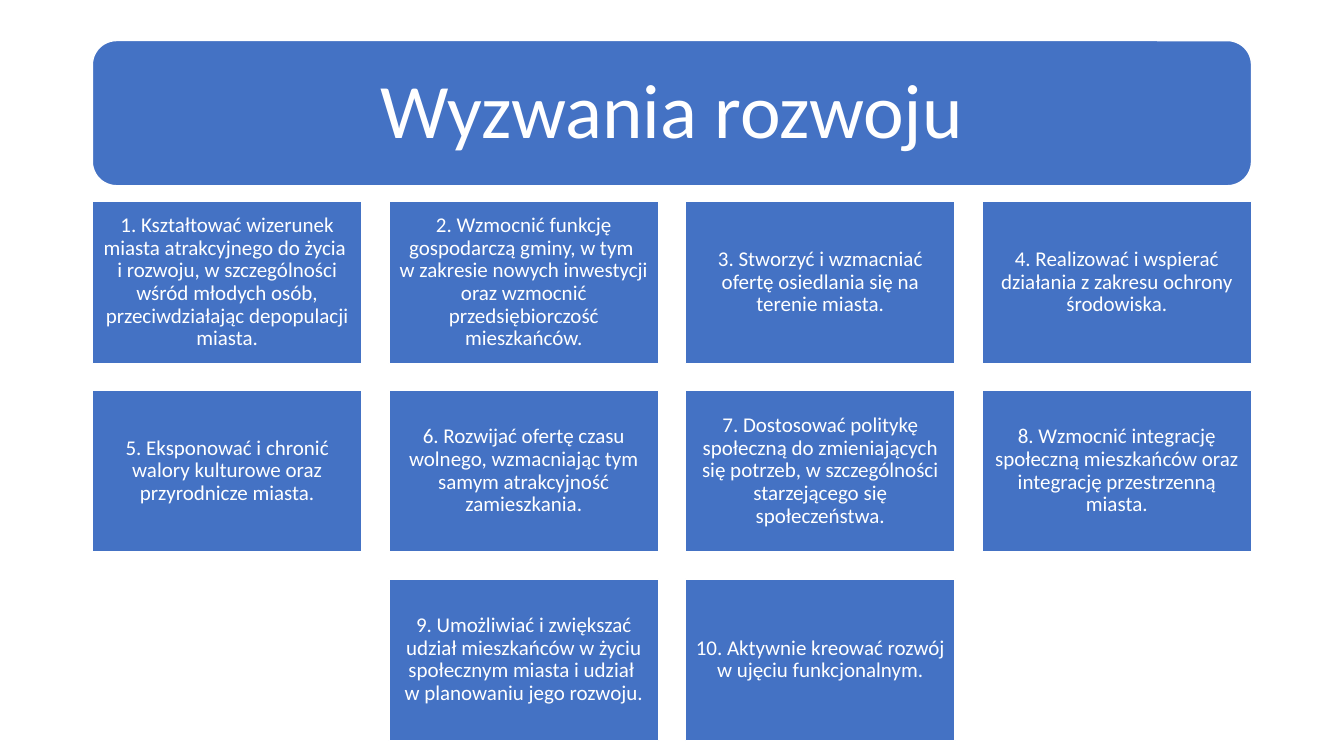
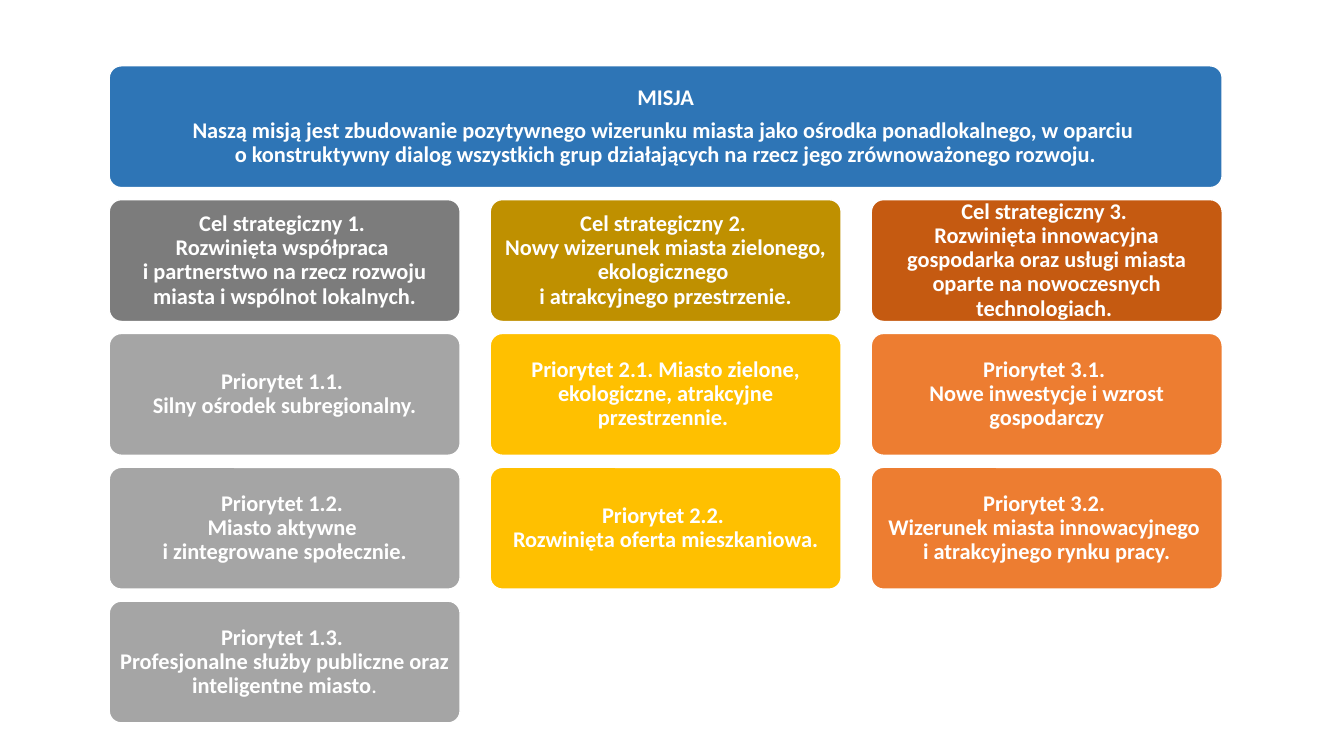
import copy
from dataclasses import dataclass

import pptx
import pptx.dml.color
import pptx.enum.shapes
import pptx.enum.text
import pptx.oxml.ns
import pptx.util

Pt = pptx.util.Pt
Shapes = pptx.enum.shapes.MSO_SHAPE


@dataclass(frozen=True)
class Theme:
    font: str = "Calibri"
    white: str = "FFFFFF"
    blue: str = "4472C4"
    mission_blue: str = "2E75B6"
    # Each pair: goal colour, priority colour
    goal_colours: tuple = (("7C7C7C", "A5A5A5"), ("BF9000", "FFC000"), ("C55A11", "ED7D31"))
    title_size: float = 55
    card_size: float = 15
    goal_size: float = 16
    line_spacing: float = 0.9
    paragraph_gap: float = 6.5
    inset_ratio: float = 0.3  # text margin as a share of the type size
    outline: float = 1


THEME = Theme()
SLIDE_WIDTH, SLIDE_HEIGHT = 960, 540

# Content
CHALLENGES_TITLE = "Wyzwania rozwoju"
CHALLENGES = [
    "1. Kształtować wizerunek miasta atrakcyjnego do życia \ni rozwoju, w szczególności wśród młodych osób, przeciwdziałając depopulacji miasta.",
    "2. Wzmocnić funkcję gospodarczą gminy, w tym \nw zakresie nowych inwestycji oraz wzmocnić przedsiębiorczość mieszkańców.",
    "3. Stworzyć i wzmacniać ofertę osiedlania się na terenie miasta.",
    "4. Realizować i wspierać działania z zakresu ochrony środowiska.",
    "5. Eksponować i chronić walory kulturowe oraz przyrodnicze miasta.",
    "6. Rozwijać ofertę czasu wolnego, wzmacniając tym samym atrakcyjność zamieszkania.",
    "7. Dostosować politykę społeczną do zmieniających się potrzeb, w szczególności starzejącego się społeczeństwa.",
    "8. Wzmocnić integrację społeczną mieszkańców oraz integrację przestrzenną miasta.",
    "9. Umożliwiać i zwiększać udział mieszkańców w życiu społecznym miasta i udział \nw planowaniu jego rozwoju.",
    "10. Aktywnie kreować rozwój w ujęciu funkcjonalnym.",
]

MISSION = [
    "MISJA",
    "Naszą misją jest zbudowanie pozytywnego wizerunku miasta jako ośrodka ponadlokalnego, w oparciu \no konstruktywny dialog wszystkich grup działających na rzecz jego zrównoważonego rozwoju.",
]
# One column per goal: the goal, then its priorities; a pair is (text, regular-weight ending)
GOALS = [
    [
        "Cel strategiczny 1. \nRozwinięta współpraca \ni partnerstwo na rzecz rozwoju miasta i wspólnot lokalnych.",
        "Priorytet 1.1. \nSilny ośrodek subregionalny.",
        "Priorytet 1.2. \nMiasto aktywne \ni zintegrowane społecznie.",
        ("Priorytet 1.3. \nProfesjonalne służby publiczne oraz inteligentne miasto", "."),
    ],
    [
        "Cel strategiczny 2. \nNowy wizerunek miasta zielonego, ekologicznego \ni atrakcyjnego przestrzenie.",
        "Priorytet 2.1. Miasto zielone, ekologiczne, atrakcyjne przestrzennie. ",
        "Priorytet 2.2. \nRozwinięta oferta mieszkaniowa.",
    ],
    [
        "Cel strategiczny 3. \nRozwinięta innowacyjna gospodarka oraz usługi miasta oparte na nowoczesnych technologiach. ",
        "Priorytet 3.1. \nNowe inwestycje i wzrost gospodarczy",
        "Priorytet 3.2. \nWizerunek miasta innowacyjnego \ni atrakcyjnego rynku pracy.",
    ],
]


# Shared building blocks
def rgb(colour):
    return pptx.dml.color.RGBColor.from_string(colour)


def write_text(paragraph, text, *, size, bold=False, regular_ending="", gap=0):
    paragraph.text = text
    if regular_ending:
        paragraph.add_run().text = regular_ending
    paragraph.alignment = pptx.enum.text.PP_ALIGN.CENTER
    paragraph.line_spacing = THEME.line_spacing
    paragraph.space_after = Pt(gap)
    for run in paragraph.runs:
        run.font.name = THEME.font
        run.font.size = Pt(size)
        run.font.bold = bold
        run.font.color.rgb = rgb(THEME.white)
    # Line breaks take the same type size as the text around them
    first_format = paragraph.runs[0].font._element
    for line_break in paragraph._p.findall(pptx.oxml.ns.qn("a:br")):
        line_break.append(copy.deepcopy(first_format))
    if regular_ending:
        paragraph.runs[-1].font.bold = False


def add_box(slide, paragraphs, left, top, width, height, *, fill, size,
            kind=Shapes.RECTANGLE, corner=None, bold=False):
    shape = slide.shapes.add_shape(kind, Pt(left), Pt(top), Pt(width), Pt(height))
    shape.shadow.inherit = False
    if corner is not None:
        shape.adjustments[0] = corner
    shape.fill.solid()
    shape.fill.fore_color.rgb = rgb(fill)
    shape.line.color.rgb = rgb(THEME.white)
    shape.line.width = Pt(THEME.outline)

    frame = shape.text_frame
    frame.word_wrap = True
    frame.vertical_anchor = pptx.enum.text.MSO_ANCHOR.MIDDLE
    inset = Pt(size * THEME.inset_ratio)
    frame.margin_left = frame.margin_right = inset
    frame.margin_top = frame.margin_bottom = inset
    for index, item in enumerate(paragraphs):
        text, ending = (item, "") if isinstance(item, str) else item
        paragraph = frame.add_paragraph() if index else frame.paragraphs[0]
        gap = THEME.paragraph_gap if index < len(paragraphs) - 1 else 0
        write_text(paragraph, text, size=size, bold=bold, regular_ending=ending, gap=gap)


def add_blank_slide(presentation):
    return presentation.slides.add_slide(presentation.slide_layouts[6])


# Slide 1: title band over a card grid, last row centred
def build_challenges(presentation):
    slide = add_blank_slide(presentation)
    margin, cards_top, columns = 66, 144, 4
    width = SLIDE_WIDTH - 2 * margin
    add_box(slide, [CHALLENGES_TITLE], margin, 29, width, 103.7, fill=THEME.blue,
            size=THEME.title_size, kind=Shapes.ROUNDED_RECTANGLE)

    gap_ratio, height_ratio = 0.1, 0.6
    card_width = width / (columns + gap_ratio * (columns - 1))
    card_height = card_width * height_ratio
    gap = card_width * gap_ratio
    for start in range(0, len(CHALLENGES), columns):
        row = CHALLENGES[start:start + columns]
        row_width = len(row) * (card_width + gap) - gap
        top = cards_top + start // columns * (card_height + gap)
        for column, challenge in enumerate(row):
            left = (SLIDE_WIDTH - row_width) / 2 + column * (card_width + gap)
            add_box(slide, [challenge], left, top, card_width, card_height,
                    fill=THEME.blue, size=THEME.card_size)


# Slide 2: mission over columns of goals and priorities
def build_strategy(presentation):
    slide = add_blank_slide(presentation)
    left, top, width, height = 78, 47, 795, 87
    column_gap, row_step = 21.5, 95.6
    style = dict(size=THEME.goal_size, bold=True, kind=Shapes.ROUNDED_RECTANGLE, corner=0.1)
    add_box(slide, MISSION, left, top, width, height, fill=THEME.mission_blue, **style)

    column_width = (width - column_gap * (len(GOALS) - 1)) / len(GOALS)
    for column, (boxes, colours) in enumerate(zip(GOALS, THEME.goal_colours)):
        column_left = left + column * (column_width + column_gap)
        for row, text in enumerate(boxes):
            add_box(slide, [text], column_left, top + (row + 1) * row_step,
                    column_width, height, fill=colours[min(row, 1)], **style)


def main():
    presentation = pptx.Presentation()
    presentation.slide_width = Pt(SLIDE_WIDTH)
    presentation.slide_height = Pt(SLIDE_HEIGHT)
    build_challenges(presentation)
    build_strategy(presentation)
    presentation.save("out.pptx")


if __name__ == "__main__":
    main()
